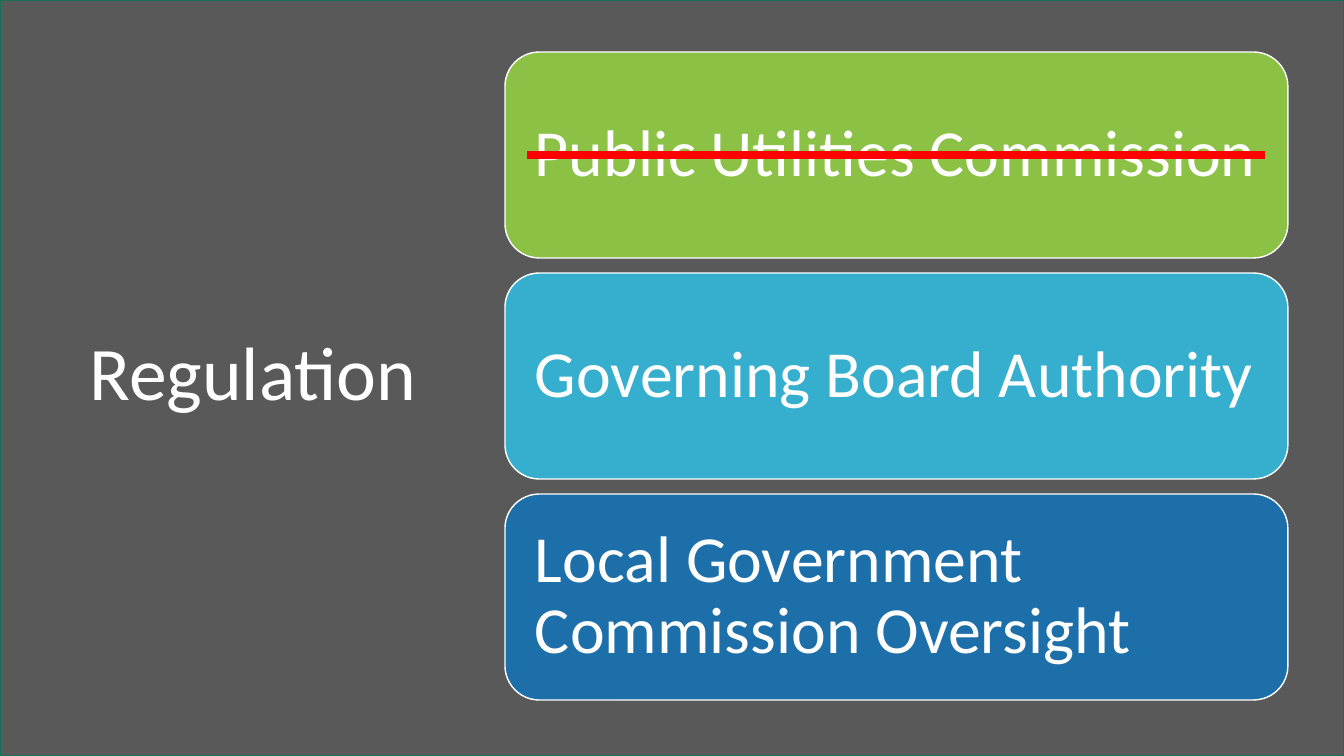
from lxml.etree import SubElement
from pptx import Presentation
from pptx.dml.color import RGBColor
from pptx.enum.shapes import MSO_CONNECTOR, MSO_SHAPE
from pptx.enum.text import MSO_ANCHOR, PP_ALIGN
from pptx.oxml.ns import qn
from pptx.util import Pt

WHITE = RGBColor(0xFF, 0xFF, 0xFF)
GRAY = RGBColor(0x59, 0x59, 0x59)
DARK_GREEN = RGBColor(0x15, 0x72, 0x59)
GREEN = RGBColor(0x8B, 0xC1, 0x45)
TEAL = RGBColor(0x36, 0xAF, 0xCE)
BLUE = RGBColor(0x1D, 0x6F, 0xA9)
RED = RGBColor(0xFF, 0x00, 0x00)

TITLE = "Regulation"
REGULATORS = [
    ("Public Utilities Commission", GREEN),
    ("Governing Board Authority", TEAL),
    ("Local Government Commission Oversight", BLUE),
]

SLIDE_W, SLIDE_H = 1344, 756
CARD_X, CARD_Y, CARD_W, CARD_H, CARD_GAP = 505, 52, 783, 206, 15
STRIKE_X1, STRIKE_X2 = 527, 1265


def px(n):
    return round(n * 914400 / 100.8)


def add_block(s, kind, box, fill, line):
    sp = s.shapes.add_shape(kind, *map(px, box))
    sp.shadow.inherit = False
    sp.fill.solid()
    sp.fill.fore_color.rgb = fill
    sp.line.color.rgb = line
    sp.line.width = Pt(1)
    return sp


def write(sp, text, size, align=PP_ALIGN.LEFT, inset=10):
    tf = sp.text_frame
    tf.word_wrap = True
    tf.vertical_anchor = MSO_ANCHOR.MIDDLE
    tf.margin_left = tf.margin_right = px(inset)
    tf.margin_top = tf.margin_bottom = px(inset)
    p = tf.paragraphs[0]
    p.alignment = align
    p.line_spacing = 0.9
    r = p.add_run()
    r.text = text
    r.font.name = "Calibri"
    r.font.size = Pt(size)
    r.font.color.rgb = WHITE


def main():
    prs = Presentation()
    prs.slide_width, prs.slide_height = px(SLIDE_W), px(SLIDE_H)
    s = prs.slides.add_slide(prs.slide_layouts[6])

    add_block(s, MSO_SHAPE.RECTANGLE, (0, 0, SLIDE_W, SLIDE_H), GRAY, DARK_GREEN)
    title = s.shapes.add_textbox(px(20), px(112), px(466), px(528))
    write(title, TITLE, 54, align=PP_ALIGN.CENTER)

    for i, (name, color) in enumerate(REGULATORS):
        y = CARD_Y + i * (CARD_H + CARD_GAP)
        card = add_block(s, MSO_SHAPE.ROUNDED_RECTANGLE,
                         (CARD_X, y, CARD_W, CARD_H), color, WHITE)
        write(card, name, 47, inset=20)

    strike_y = px(CARD_Y + CARD_H // 2)
    strike = s.shapes.add_connector(MSO_CONNECTOR.STRAIGHT, px(STRIKE_X1), strike_y,
                                    px(STRIKE_X2), strike_y)
    strike.line.color.rgb = RED
    strike.line.width = Pt(6)
    SubElement(strike._element.spPr, qn("a:effectLst"))

    prs.save("out.pptx")


if __name__ == "__main__":
    main()
